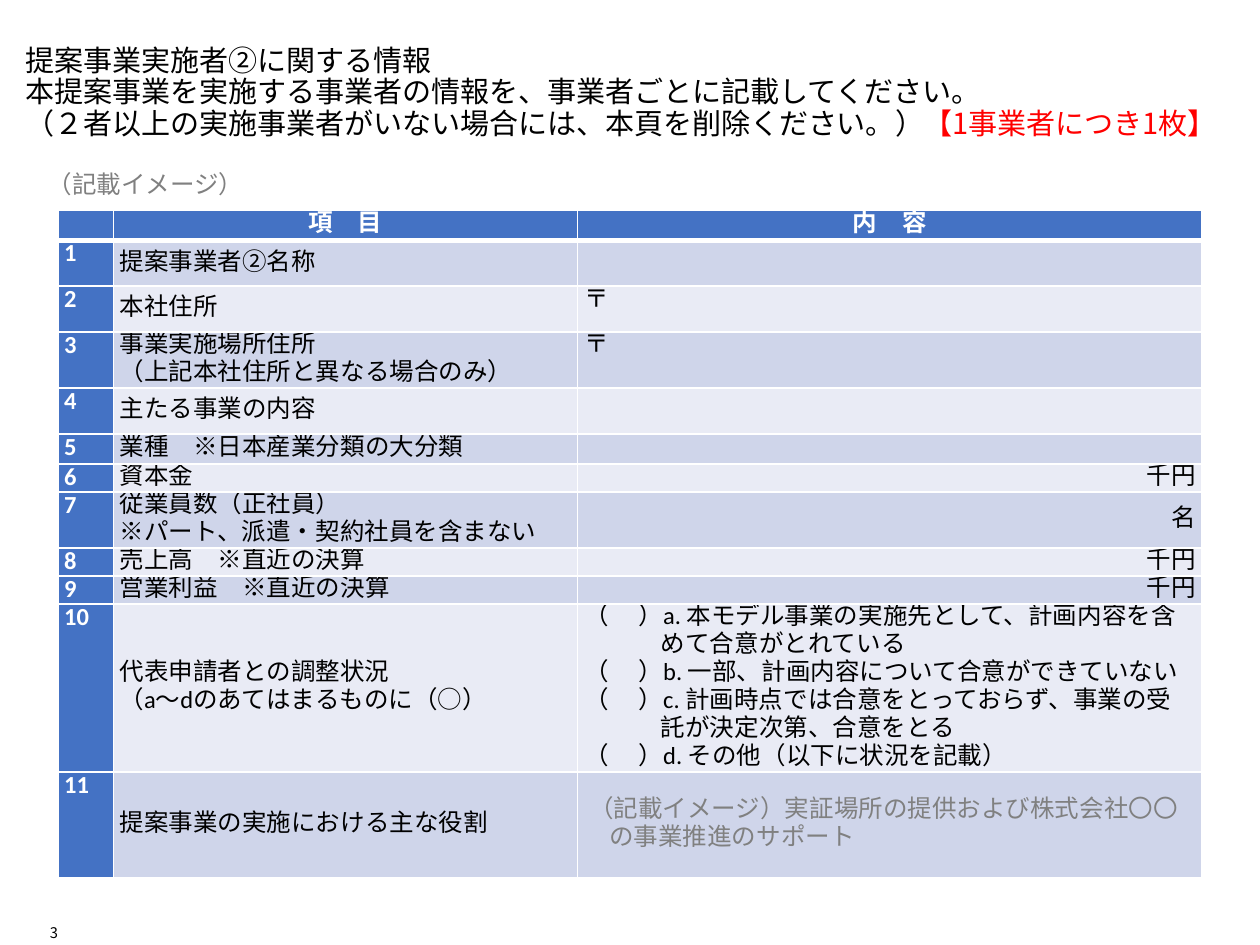
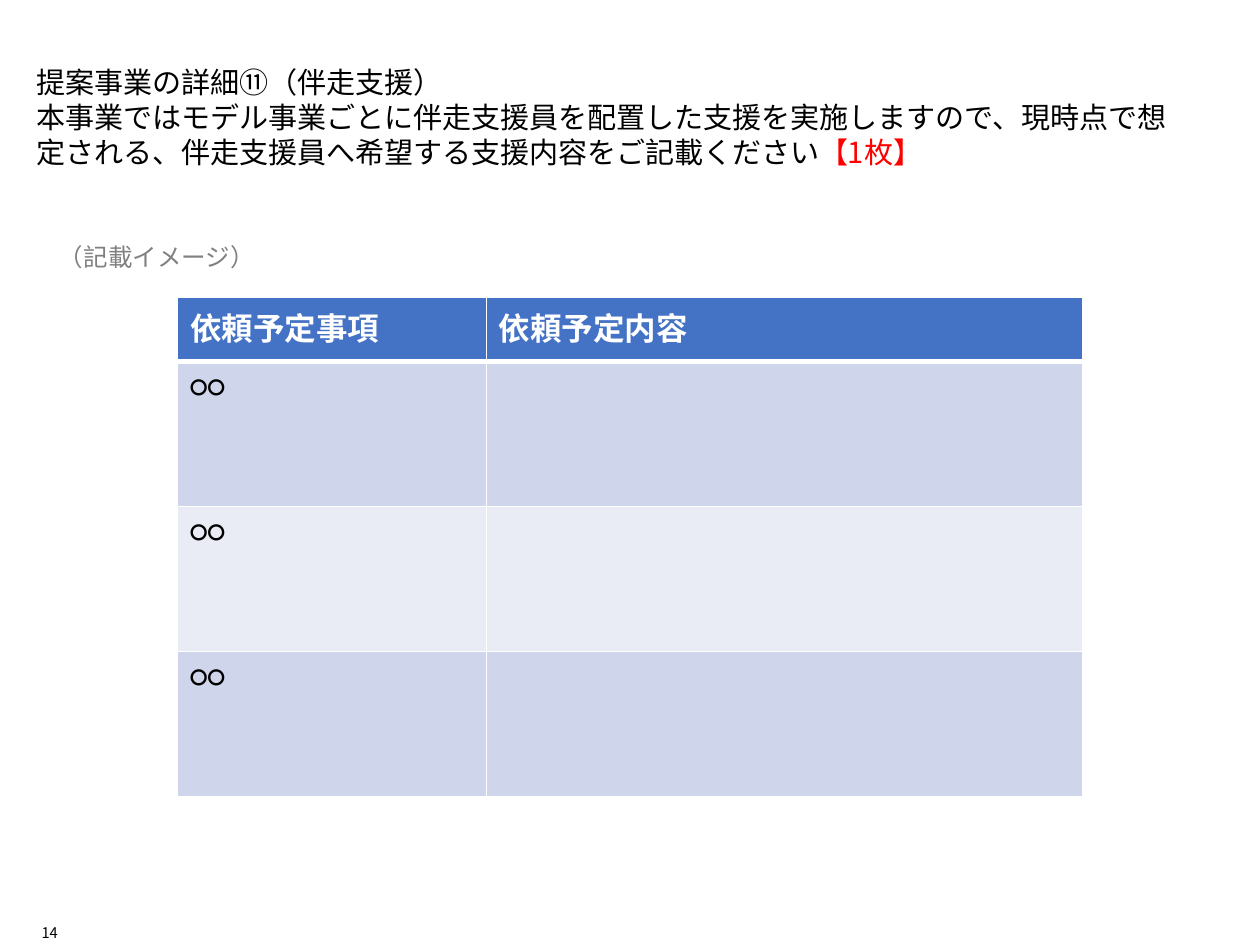
import dataclasses

import pptx
import pptx.dml.color
import pptx.enum.text
import pptx.oxml.ns
import pptx.util
from lxml import etree

COLORS = {
    "text": "000000",
    "hint": "808080",
    "alert": "FF0000",
    "white": "FFFFFF",
    "header": "4472C4",
    "band_dark": "CFD5EA",
    "band_light": "E9EBF5",
}
CJK_FONT = "Noto Sans CJK JP"
LATIN_FONT = "Calibri"
ALIGN = pptx.enum.text.PP_ALIGN
ANCHOR = pptx.enum.text.MSO_ANCHOR

SLIDE_WIDTH = pptx.util.Inches(10)
SLIDE_HEIGHT = pptx.util.Inches(7.5)
COLUMN = SLIDE_WIDTH / 100
ROW = SLIDE_HEIGHT / 75

HINT = "（記載イメージ）"
# Row heights of the information table, in grid rows
ONE_LINE, TALL, TWO_LINES, SIX_LINES, ROLE = 2.22, 3.64, 4.44, 13.33, 8.4

# Item, content, content format, row height
COMPANY_ITEMS = [
    ("提案事業者②名称", "", {}, TALL),
    ("本社住所", "〒", {}, TALL),
    ("事業実施場所住所\n（上記本社住所と異なる場合のみ）", "〒", {}, TWO_LINES),
    ("主たる事業の内容", "", {}, TALL),
    ("業種　※日本産業分類の大分類", "", {}, ONE_LINE),
    ("資本金", "千円", {"align": ALIGN.RIGHT, "anchor": ANCHOR.MIDDLE}, ONE_LINE),
    ("従業員数（正社員）\n※パート、派遣・契約社員を含まない", "名",
     {"align": ALIGN.RIGHT, "anchor": ANCHOR.MIDDLE}, TWO_LINES),
    ("売上高　※直近の決算", "千円", {"align": ALIGN.RIGHT, "anchor": ANCHOR.MIDDLE}, ONE_LINE),
    ("営業利益　※直近の決算", "千円", {"align": ALIGN.RIGHT, "anchor": ANCHOR.MIDDLE}, ONE_LINE),
    ("代表申請者との調整状況\n（a～dのあてはまるものに（○）",
     "（ 　）a. 本モデル事業の実施先として、計画内容を含めて合意がとれている\n"
     "（ 　）b. 一部、計画内容について合意ができていない\n"
     "（ 　）c. 計画時点では合意をとっておらず、事業の受託が決定次第、合意をとる\n"
     "（ 　）d. その他（以下に状況を記載）",
     {"margin": 6.1, "indent": -6.1}, SIX_LINES),
    ("提案事業の実施における主な役割",
     HINT + "実証場所の提供および株式会社〇〇の事業推進のサポート",
     {"margin": 2, "indent": -1.6, "color": "hint", "anchor": ANCHOR.MIDDLE}, ROLE),
]


@dataclasses.dataclass
class Box:
    """A region in grid columns and rows."""
    left: float
    top: float
    width: float
    height: float

    def lengths(self):
        return (across(self.left), down(self.top), across(self.width), down(self.height))


def across(columns):
    return round(columns * COLUMN)


def down(rows):
    return round(rows * ROW)


def write(para, text, size=14, color="text", font=LATIN_FONT, bold=False,
          align=ALIGN.LEFT, spacing=None, margin=0, indent=0):
    """Append text to a paragraph; a vertical tab breaks the line."""
    para.alignment = align
    if spacing:
        para.line_spacing = pptx.util.Pt(spacing)
    properties = para._p.get_or_add_pPr()
    properties.set("marL", str(across(margin)))
    properties.set("indent", str(across(indent)))
    if not text:
        para._p.get_or_add_endParaRPr().set("sz", str(size * 100))
        return
    for number, line in enumerate(text.split("\v")):
        if number:
            para.add_line_break()
        span = para.add_run()
        span.text = line
        span.font.size = pptx.util.Pt(size)
        span.font.bold = bold
        span.font.name = font
        span.font.color.rgb = pptx.dml.color.RGBColor.from_string(COLORS[color])
        east_asian = etree.SubElement(span._r.get_or_add_rPr(), pptx.oxml.ns.qn("a:ea"))
        east_asian.set("typeface", CJK_FONT)


def set_frame(frame, anchor, inset_x, inset_y, wrap=True):
    frame.word_wrap = wrap
    frame.auto_size = pptx.enum.text.MSO_AUTO_SIZE.NONE
    frame.vertical_anchor = anchor
    frame.margin_left = frame.margin_right = across(inset_x)
    frame.margin_top = frame.margin_bottom = down(inset_y)


def add_title(page, box, text, alert, anchor, inset, spacing):
    title = page.shapes.title
    title.left, title.top, title.width, title.height = box.lengths()
    set_frame(title.text_frame, anchor, inset, inset)
    para = title.text_frame.paragraphs[0]
    style = {"size": 16.6, "font": CJK_FONT, "spacing": spacing}
    write(para, text, **style)
    write(para, alert, color="alert", **style)


def add_hint(page, left, top):
    label = page.shapes.add_textbox(*Box(left, top, 17.7, 3.4).lengths())
    set_frame(label.text_frame, ANCHOR.TOP, 1, 0.5, wrap=False)
    write(label.text_frame.paragraphs[0], HINT, color="hint")


def add_page_number(page, number):
    label = page.shapes.add_textbox(*Box(2.8, 72.9, 1.8, 1.8).lengths())
    set_frame(label.text_frame, ANCHOR.BOTTOM, 0, 0)
    write(label.text_frame.paragraphs[0], str(number), size=8.4, font=CJK_FONT, align=ALIGN.RIGHT)


def add_table(page, box, column_shares, row_shares):
    """Add a table whose columns and rows divide the box by the given shares."""
    left, top, width, height = box.lengths()
    table = page.shapes.add_table(
        len(row_shares), len(column_shares), left, top, width, height).table
    for column, share in zip(table.columns, column_shares):
        column.width = round(width * share / sum(column_shares))
    for row, share in zip(table.rows, row_shares):
        row.height = round(height * share / sum(row_shares))
    return table


def draw_borders(cell, row):
    properties = cell._tc.get_or_add_tcPr()
    widths = {"L": 1, "R": 1, "T": 3 if row == 1 else 1, "B": 3 if row == 0 else 1}
    for side, width in widths.items():
        line = etree.SubElement(properties, pptx.oxml.ns.qn(f"a:ln{side}"))
        line.set("w", str(pptx.util.Pt(width)))
        fill = etree.SubElement(line, pptx.oxml.ns.qn("a:solidFill"))
        etree.SubElement(fill, pptx.oxml.ns.qn("a:srgbClr")).set("val", COLORS["white"])


def fill_cell(table, row, column, text, heading=False, anchor=ANCHOR.TOP,
              inset_x=1, inset_y=0.5, **style):
    cell = table.cell(row, column)
    draw_borders(cell, row)
    band = "header" if heading else "band_dark" if row % 2 else "band_light"
    cell.fill.solid()
    cell.fill.fore_color.rgb = pptx.dml.color.RGBColor.from_string(COLORS[band])
    cell.vertical_anchor = anchor
    cell.margin_left = cell.margin_right = across(inset_x)
    cell.margin_top = cell.margin_bottom = down(inset_y)
    if heading:
        style = {"color": "white", "bold": True, **style}
    for number, line in enumerate(text.split("\n")):
        frame = cell.text_frame
        write(frame.add_paragraph() if number else frame.paragraphs[0], line, **style)


def add_company_table(page, box):
    heights = [ONE_LINE] + [item[-1] for item in COMPANY_ITEMS]
    table = add_table(page, box, [4.4, 36.9, 49.6], heights)
    compact = {"inset_x": 0.5, "inset_y": 0, "spacing": 16}
    for column, text in enumerate(["", "項　目", "内　容"]):
        fill_cell(table, 0, column, text, heading=True, align=ALIGN.CENTER, **compact)
    for row, (item, content, style, _) in enumerate(COMPANY_ITEMS, start=1):
        fill_cell(table, row, 0, str(row), heading=True, **compact)
        fill_cell(table, row, 1, item, anchor=ANCHOR.MIDDLE, **compact)
        fill_cell(table, row, 2, content, **compact, **style)


def add_request_table(page, box):
    table = add_table(page, box, [24.5, 47.3], [5.1, 11.5, 11.5, 11.5])
    for column, text in enumerate(["依頼予定事項", "依頼予定内容"]):
        fill_cell(table, 0, column, text, heading=True, size=18)
    for row in range(1, 4):
        for column, text in enumerate(["○○", ""]):
            fill_cell(table, row, column, text, size=18)


def add_page(deck, number):
    page = deck.slides.add_slide(deck.slide_layouts.get_by_name("Title Only"))
    add_page_number(page, number)
    return page


def build_company_page(deck):
    page = add_page(deck, 3)
    add_title(page, Box(2, 4.4, 96.2, 6.7),
              "提案事業実施者②に関する情報\v"
              "本提案事業を実施する事業者の情報を、事業者ごとに記載してください。\v"
              "（２者以上の実施事業者がいない場合には、本頁を削除ください。）",
              "【1事業者につき1枚】", ANCHOR.BOTTOM, inset=0, spacing=18)
    add_hint(page, 2.8, 12.9)
    add_company_table(page, Box(4.6, 16.7, 90.8, 52.7))


def build_support_page(deck):
    page = add_page(deck, 14)
    add_title(page, Box(2.5, 4.7, 91.1, 9.1),
              "提案事業の詳細⑪（伴走支援）\v"
              "本事業ではモデル事業ごとに伴走支援員を配置した支援を実施しますので、"
              "現時点で想定される、伴走支援員へ希望する支援内容をご記載ください",
              "【1枚】", ANCHOR.MIDDLE, inset=0.4, spacing=20)
    add_request_table(page, Box(14.1, 23.6, 71.8, 39.6))
    add_hint(page, 3.7, 18.7)


def main():
    deck = pptx.Presentation()
    deck.slide_width = SLIDE_WIDTH
    deck.slide_height = SLIDE_HEIGHT
    build_company_page(deck)
    build_support_page(deck)
    deck.save("out.pptx")


if __name__ == "__main__":
    main()
